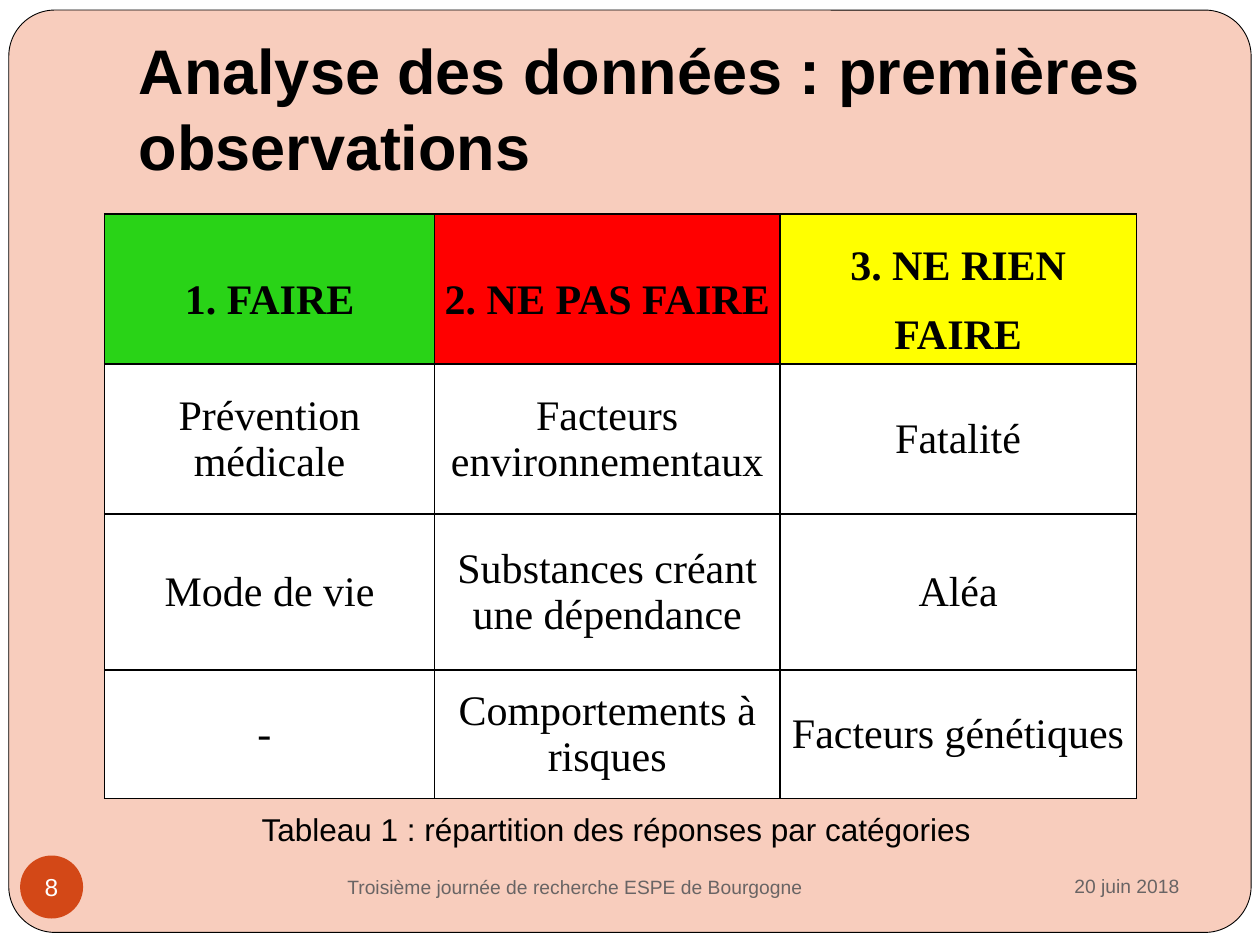
from dataclasses import dataclass
from lxml.etree import SubElement
from pptx import Presentation
from pptx.dml.color import RGBColor
from pptx.enum.shapes import MSO_SHAPE as Shape
from pptx.enum.text import MSO_ANCHOR as Anchor, MSO_AUTO_SIZE as AutoSize, PP_ALIGN as Align
from pptx.oxml.ns import qn
from pptx.util import Inches, Pt

TITLE = "Analyse des données : premières observations"
HEADERS = [("1. FAIRE", "29D317"), ("2. NE PAS FAIRE", "FF0000"), ("3. NE RIEN FAIRE", "FFFF00")]
ANSWERS = [
    ("Prévention médicale", "Facteurs environnementaux", "Fatalité"),
    ("Mode de vie", "Substances créant une dépendance", "Aléa"),
    ("- ", "Comportements à risques", "Facteurs génétiques"),
]
COLUMN_WIDTHS = [2.62, 2.74, 2.83]
ROW_HEIGHTS = [1.19, 1.19, 1.24, 1.02]
CAPTION = "Tableau 1 : répartition des réponses par catégories "
EVENT = "Troisième journée de recherche ESPE de Bourgogne"
DATE = "20 juin 2018"
PAGE_NUMBER = "8"


@dataclass(frozen=True)
class Theme:
    sans: str = "Arial"
    serif: str = "Times New Roman"
    ink: str = "000000"
    muted: str = "696464"
    white: str = "FFFFFF"
    panel: str = "F8CDBD"
    accent: str = "D34817"
    title_size: int = 36
    table_size: int = 24
    caption_size: int = 18
    number_size: int = 14
    footer_size: int = 11


THEME = Theme()


def write(frame, text, size, color=THEME.ink, font=THEME.sans, bold=False,
          align=Align.CENTER, spacing=None):
    para = frame.paragraphs[0]
    para.alignment = align
    if spacing:
        para.line_spacing = spacing
    span = para.add_run()
    span.text = text
    span.font.name = font
    span.font.size = Pt(size)
    span.font.bold = bold
    span.font.color.rgb = RGBColor.from_string(color)


def paint(target, color):
    target.fill.solid()
    target.fill.fore_color.rgb = RGBColor.from_string(color)


def set_insets(frame, *sides):
    frame.margin_left, frame.margin_top, frame.margin_right, frame.margin_bottom = map(Inches, sides)


def add_panel(page):
    panel = page.shapes.add_shape(
        Shape.ROUNDED_RECTANGLE, Inches(0.07), Inches(0.08), Inches(9.86), Inches(7.32))
    panel.adjustments[0] = 0.05
    panel.shadow.inherit = False
    paint(panel, THEME.panel)
    panel.line.color.rgb = RGBColor.from_string(THEME.ink)
    panel.line.width = Pt(0.5)
    page.shapes.title.element.addprevious(panel.element)


def add_title(page):
    title = page.shapes.title
    title.left, title.top, title.width, title.height = map(Inches, (1, 0.3, 8.5, 1.25))
    frame = title.text_frame
    frame.auto_size = AutoSize.NONE
    frame.vertical_anchor = Anchor.BOTTOM
    set_insets(frame, 0.1, 0.05, 0.1, 0.1)
    write(frame, TITLE, THEME.title_size, bold=True, align=Align.LEFT)


def add_borders(cell):
    properties = cell._tc.get_or_add_tcPr()
    for position, side in enumerate(("lnL", "lnR", "lnT", "lnB")):
        border = SubElement(properties, qn(f"a:{side}"), w=str(Pt(1)))
        fill = SubElement(border, qn("a:solidFill"))
        SubElement(fill, qn("a:srgbClr"), val=THEME.ink)
        properties.insert(position, border)


def add_answer_table(page):
    rows = [HEADERS] + [[(text, THEME.white) for text in row] for row in ANSWERS]
    table = page.shapes.add_table(
        len(rows), len(HEADERS), Inches(0.83), Inches(1.7),
        Inches(sum(COLUMN_WIDTHS)), Inches(sum(ROW_HEIGHTS))).table
    table.first_row = table.horz_banding = False
    for column, width in zip(table.columns, COLUMN_WIDTHS):
        column.width = Inches(width)
    for row_index, (row, height) in enumerate(zip(rows, ROW_HEIGHTS)):
        table.rows[row_index].height = Inches(height)
        header = row_index == 0
        for column_index, (text, color) in enumerate(row):
            cell = table.cell(row_index, column_index)
            cell.vertical_anchor = Anchor.MIDDLE
            set_insets(cell, 0.07, 0, 0.07, 0)
            paint(cell, color)
            add_borders(cell)
            write(cell.text_frame, text, THEME.table_size, font=THEME.serif,
                  bold=header, spacing=1.5 if header else None)


def add_label(page, area, text, size, anchor=Anchor.MIDDLE, **style):
    frame = page.shapes.add_textbox(*map(Inches, area)).text_frame
    frame.word_wrap = True
    frame.vertical_anchor = anchor
    write(frame, text, size, **style)


def add_page_number(page):
    badge = page.shapes.add_shape(Shape.OVAL, Inches(0.16), Inches(6.79), Inches(0.5), Inches(0.5))
    badge.shadow.inherit = False
    paint(badge, THEME.accent)
    badge.line.fill.background()
    frame = badge.text_frame
    frame.word_wrap = False
    frame.vertical_anchor = Anchor.MIDDLE
    set_insets(frame, 0, 0, 0, 0)
    write(frame, PAGE_NUMBER, THEME.number_size, color=THEME.white)


def main():
    deck = Presentation()
    deck.slide_width, deck.slide_height = Inches(10), Inches(7.5)
    page = deck.slides.add_slide(deck.slide_layouts[5])
    paint(page.background, THEME.white)
    add_panel(page)
    add_title(page)
    add_answer_table(page)
    add_label(page, (1.38, 6.38, 7.09, 0.4), CAPTION, THEME.caption_size, anchor=Anchor.TOP)
    add_label(page, (6.75, 6.77, 2.71, 0.52), DATE, THEME.footer_size,
              color=THEME.muted, align=Align.RIGHT)
    add_label(page, (0.98, 6.79, 7.17, 0.5), EVENT, THEME.footer_size, color=THEME.muted)
    add_page_number(page)
    deck.save("out.pptx")


if __name__ == "__main__":
    main()
